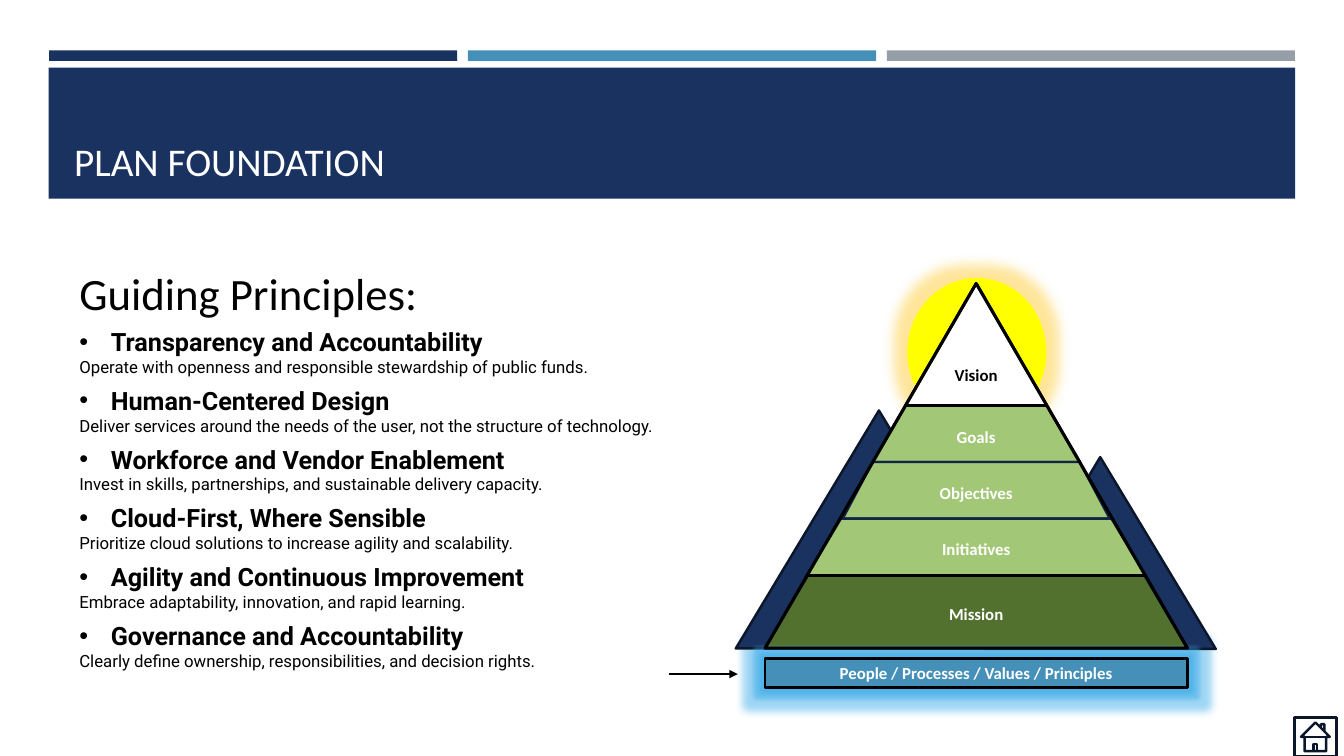
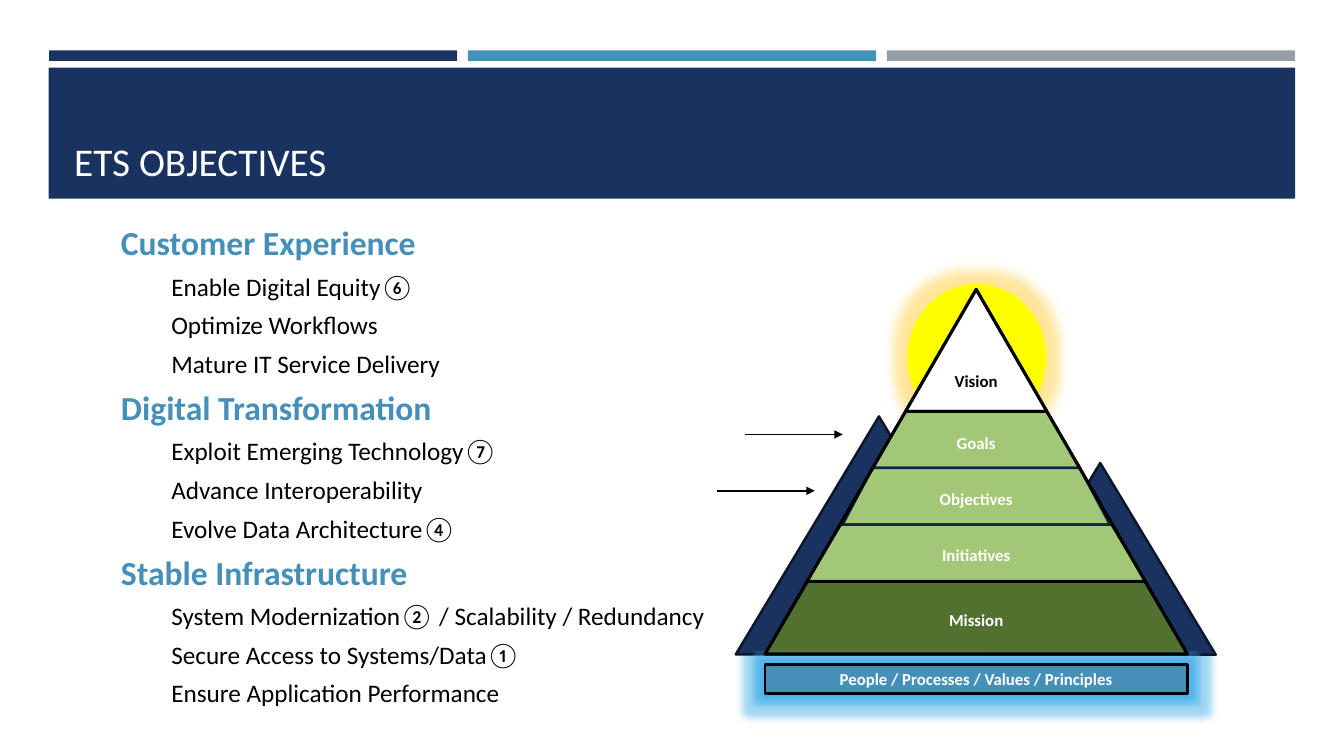
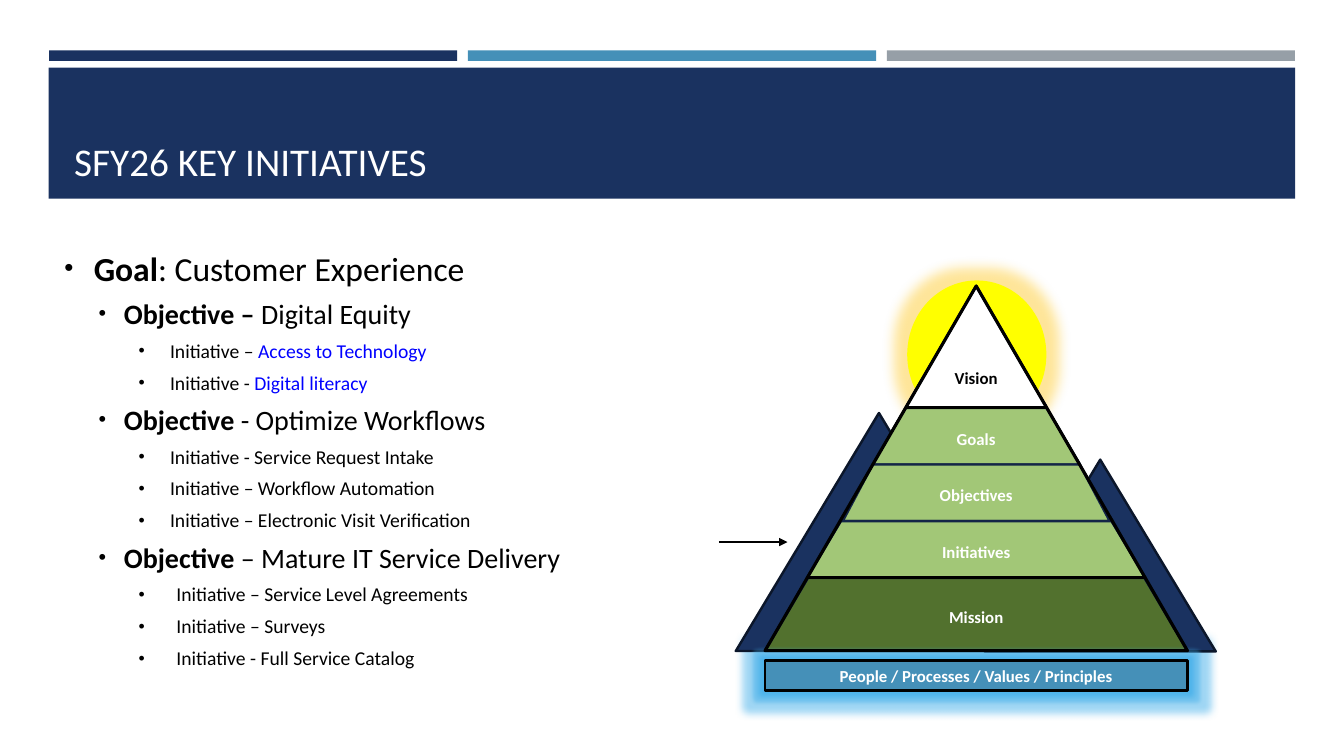
from lxml.etree import SubElement
from pptx import Presentation
from pptx.dml.color import RGBColor
from pptx.enum.shapes import MSO_CONNECTOR, MSO_SHAPE
from pptx.enum.text import MSO_ANCHOR, PP_ALIGN
from pptx.oxml.ns import qn
from pptx.util import Pt

NAVY = RGBColor(0x1A, 0x32, 0x60)
BLUE = RGBColor(0x45, 0x90, 0xB8)
GRAY = RGBColor(0x96, 0x9F, 0xA7)
INK = RGBColor(0x0B, 0x16, 0x2A)
EDGE = RGBColor(0x13, 0x25, 0x47)
BLACK = RGBColor(0, 0, 0)
WHITE = RGBColor(0xFF, 0xFF, 0xFF)
YELLOW = RGBColor(0xFF, 0xFF, 0)
ICE = RGBColor(0xDA, 0xF5, 0xFA)
GREEN = RGBColor(0xA2, 0xC7, 0x77)
MOSS = RGBColor(0x52, 0x71, 0x2E)
LINK = RGBColor(0, 0, 0xFF)
AMBER = RGBColor(0xFF, 0xC0, 0)
SKY = RGBColor(0x3F, 0xAE, 0xEA)

TITLE = dict(name="Calibri", size=Pt(28), color=WHITE)
LABEL = dict(name="Calibri", size=Pt(12), bold=True)
BOLD = dict(bold=True)
BLUE_TEXT = dict(color=LINK)

# Each kind of line: font, space after, left indent, hanging, bullet percent
KINDS = {
    "lead": (dict(name="Calibri", size=Pt(32)), 5, 0, 0, None),
    "point": (dict(name="Roboto", size=Pt(18), bold=True), 0, 22.5, 22.5, 100),
    "note": (dict(name="Roboto", size=Pt(12)), 6, 0, 0, None),
    "head": (dict(name="Calibri", size=Pt(24), bold=True, color=BLUE),
             6, 0, 0, None),
    "item": (dict(name="Calibri", size=Pt(18)), 6, 36, 0, None),
    "goal": (dict(name="Calibri", size=Pt(24)), 6, 21, 21, 77),
    "aim": (dict(name="Calibri", size=Pt(20)), 6, 42.5, 18, 77),
    "task": (dict(name="Calibri", size=Pt(14)), 6, 75.5, 22.5, 90),
    "far": (dict(name="Calibri", size=Pt(14)), 6, 80, 27, 90),
}

# Pyramid tiers from the top: label, width, height, slope, fill, text colour
TIERS = [
    ("Vision", 100.8, 87, None, WHITE, BLACK),
    ("Goals", 148.3, 40.5, 0.59, GREEN, WHITE),
    ("Objectives", 190.8, 40.5, 0.53, GREEN, WHITE),
    ("Initiatives", 242, 40.5, 0.6, GREEN, WHITE),
    ("Mission", 301.7, 52, 0.59, MOSS, WHITE),
]
MID = 697.3
WIDE = TIERS[-1][1]
TALL = sum(tier[2] for tier in TIERS)

VALUES = [
    ("Transparency and Accountability",
     "Operate with openness and responsible stewardship of public funds."),
    ("Human-Centered Design",
     "Deliver services around the needs of the user, "
     "not the structure of technology."),
    ("Workforce and Vendor Enablement",
     "Invest in skills, partnerships, and sustainable delivery capacity."),
    ("Cloud-First, Where Sensible",
     "Prioritize cloud solutions to increase agility and scalability."),
    ("Agility and Continuous Improvement",
     "Embrace adaptability, innovation, and rapid learning."),
    ("Governance and Accountability",
     "Clearly define ownership, responsibilities, and decision rights."),
]

THEMES = {
    "Customer Experience": [
        "Enable Digital Equity⑥",
        "Optimize Workflows",
        "Mature IT Service Delivery"],
    "Digital Transformation": [
        "Exploit Emerging Technology⑦",
        "Advance Interoperability",
        "Evolve Data Architecture④"],
    "Stable Infrastructure": [
        "System Modernization② / Scalability / Redundancy",
        "Secure Access to Systems/Data①",
        "Ensure Application Performance"],
}

PLANS = [
    ("goal", ("Goal", BOLD), ": Customer Experience"),
    ("aim", ("Objective – ", BOLD), "Digital Equity"),
    ("task", "Initiative – ", ("Access to Technology", BLUE_TEXT)),
    ("task", "Initiative - ", ("Digital literacy", BLUE_TEXT)),
    ("aim", ("Objective", BOLD), " - Optimize Workflows"),
    ("task", "Initiative - Service Request Intake"),
    ("task", "Initiative – Workflow Automation"),
    ("task", "Initiative – Electronic Visit Verification"),
    ("aim", ("Objective", BOLD), " – Mature IT Service Delivery"),
    ("far", "Initiative – Service Level Agreements"),
    ("far", "Initiative – Surveys"),
    ("far", "Initiative - Full Service Catalog"),
]


def add_run(para, text, style):
    run = para.add_run()
    run.text = text
    for key, value in style.items():
        if key == "color":
            run.font.color.rgb = value
        else:
            setattr(run.font, key, value)


def add_box(slide, left, top, width, height, anchor=MSO_ANCHOR.TOP):
    box = slide.shapes.add_textbox(Pt(left), Pt(top), Pt(width), Pt(height))
    frame = box.text_frame
    form = dict(word_wrap=True, vertical_anchor=anchor, margin_left=0,
                margin_right=0, margin_top=0, margin_bottom=0)
    for key, value in form.items():
        setattr(frame, key, value)
    return frame


def add_form(parent, kind, place, fill=None, line=None, weight=1.75, adj=None):
    """Add a preset shape; without a fill or line it has none."""
    shape = parent.add_shape(kind, *map(Pt, place))
    shape.shadow.inherit = False
    if fill is None:
        shape.fill.background()
    else:
        shape.fill.solid()
        shape.fill.fore_color.rgb = fill
    if line is None:
        shape.line.fill.background()
    else:
        shape.line.color.rgb = line
        shape.line.width = Pt(weight)
    if adj is not None:
        shape.adjustments[0] = adj
    return shape


def add_label(shape, text, color):
    frame = shape.text_frame
    frame.word_wrap = True
    frame.vertical_anchor = MSO_ANCHOR.MIDDLE
    frame.margin_left = frame.margin_right = 0
    para = frame.paragraphs[0]
    para.alignment = PP_ALIGN.CENTER
    add_run(para, text, dict(LABEL, color=color))


def add_glow(shape, color, radius, alpha):
    effect = shape.element.spPr.find(qn("a:effectLst"))
    glow = SubElement(effect, qn("a:glow"), rad=str(Pt(radius)))
    tint = SubElement(glow, qn("a:srgbClr"), val=str(color))
    SubElement(tint, qn("a:alpha"), val=str(alpha * 1000))


def add_line(parent, left, right, top, weight, arrow=False):
    line = parent.add_connector(MSO_CONNECTOR.STRAIGHT,
                                Pt(left), Pt(top), Pt(right), Pt(top))
    line.line.color.rgb = BLACK
    line.line.width = Pt(weight)
    props = line.element.spPr
    if arrow:
        SubElement(props.find(qn("a:ln")), qn("a:tailEnd"), type="triangle")
    SubElement(props, qn("a:effectLst"))


def add_bullet(para, percent):
    props = para._p.get_or_add_pPr()
    tint = SubElement(props, qn("a:buClr"))
    SubElement(tint, qn("a:srgbClr"), val=str(BLACK))
    SubElement(props, qn("a:buSzPct"), val=str(percent * 1000))
    SubElement(props, qn("a:buFont"), typeface="Arial")
    SubElement(props, qn("a:buChar"), char="•")


def add_text(slide, left, top, height, lines):
    """Fill a box with lines, each a kind followed by its runs."""
    frame = add_box(slide, left, top, 460, height)
    for i, (kind, *runs) in enumerate(lines):
        para = frame.add_paragraph() if i else frame.paragraphs[0]
        style, after, indent, hang, percent = KINDS[kind]
        para.space_after = Pt(after)
        props = para._p.get_or_add_pPr()
        props.set("marL", str(Pt(indent)))
        props.set("indent", str(-Pt(hang)))
        if percent:
            add_bullet(para, percent)
        for run in runs:
            text, extra = (run, {}) if isinstance(run, str) else run
            add_run(para, text, {"color": BLACK, **style, **extra})


def add_slide(deck, title):
    """Add a slide with the shared bars, band and title."""
    slide = deck.slides.add_slide(deck.slide_layouts[6])
    for i, color in enumerate((NAVY, BLUE, GRAY)):
        add_form(slide.shapes, MSO_SHAPE.RECTANGLE,
                 (35 + i * 299.2, 36, 291.6, 7.5), color)
    add_form(slide.shapes, MSO_SHAPE.RECTANGLE, (34.8, 48.4, 890.4, 93.6),
             NAVY)
    frame = add_box(slide, 53, 55.4, 854, 76.4, MSO_ANCHOR.BOTTOM)
    add_run(frame.paragraphs[0], title, TITLE)
    return slide


def add_peak(slide, top):
    """Draw the pyramid with its sun, mountains and base."""
    group = slide.shapes.add_group_shape().shapes
    left = MID - WIDE / 2
    whole = (left, top, WIDE, TALL)
    base = (left, top + 267.7, WIDE, 21)

    glow = add_form(group, MSO_SHAPE.RECTANGLE, base, NAVY)
    add_glow(glow, SKY, 11, 50)
    for place in ((525.6, top + 90.7, 204.5, 170),
                  (703.4, top + 124, 165, 137)):
        add_form(group, MSO_SHAPE.ISOSCELES_TRIANGLE, place, NAVY, INK)
    sun = add_form(group, MSO_SHAPE.OVAL, (648, top - 4, 99.4, 106), YELLOW)
    add_glow(sun, AMBER, 18, 40)
    add_form(group, MSO_SHAPE.ISOSCELES_TRIANGLE, whole, ICE, EDGE)

    edge = top
    for name, width, height, slope, fill, color in TIERS:
        kind = MSO_SHAPE.TRAPEZOID if slope else MSO_SHAPE.ISOSCELES_TRIANGLE
        tier = add_form(group, kind, (MID - width / 2, edge, width, height),
                        fill, EDGE, adj=slope)
        add_label(tier, name, color)
        edge += height

    foot = add_form(group, MSO_SHAPE.RECTANGLE, base, BLUE, BLACK, 2)
    add_glow(foot, SKY, 5, 40)
    add_label(foot, "People / Processes / Values / Principles", WHITE)
    add_form(group, MSO_SHAPE.ISOSCELES_TRIANGLE, whole, None, BLACK, 2.25,
             0.5)
    for width, drop in ((TIERS[0][1], TIERS[0][2]),
                        (TIERS[3][1], TALL - TIERS[4][2])):
        add_line(group, MID - width / 2, MID + width / 2, top + drop, 2)


def main():
    deck = Presentation()
    deck.slide_width, deck.slide_height = Pt(960), Pt(540)

    slide = add_slide(deck, "PLAN FOUNDATION")
    add_line(slide.shapes, 478, 527, 481.5, 1, arrow=True)
    add_peak(slide, 202.5)
    lines = [("lead", "Guiding Principles:")]
    for name, note in VALUES:
        lines += [("point", name), ("note", note)]
    add_text(slide, 56.7, 189.7, 292, lines)
    add_form(slide.shapes, MSO_SHAPE.ACTION_BUTTON_HOME,
             (924.5, 512.6, 30.2, 27.4), None, INK)

    slide = add_slide(deck, "ETS OBJECTIVES")
    lines = []
    for name, items in THEMES.items():
        lines.append(("head", name))
        lines += [("item", item) for item in items]
    add_text(slide, 86.4, 158.8, 355, lines)
    for left, top in ((532, 310.3), (512, 350.6)):
        add_line(slide.shapes, left, left + 70, top, 1, arrow=True)
    add_peak(slide, 206.7)

    slide = add_slide(deck, "SFY26 KEY INITIATIVES")
    add_line(slide.shapes, 513.5, 562.5, 387.2, 1, arrow=True)
    add_text(slide, 46, 177, 360, PLANS)
    add_peak(slide, 204.3)

    deck.save("out.pptx")


if __name__ == "__main__":
    main()
